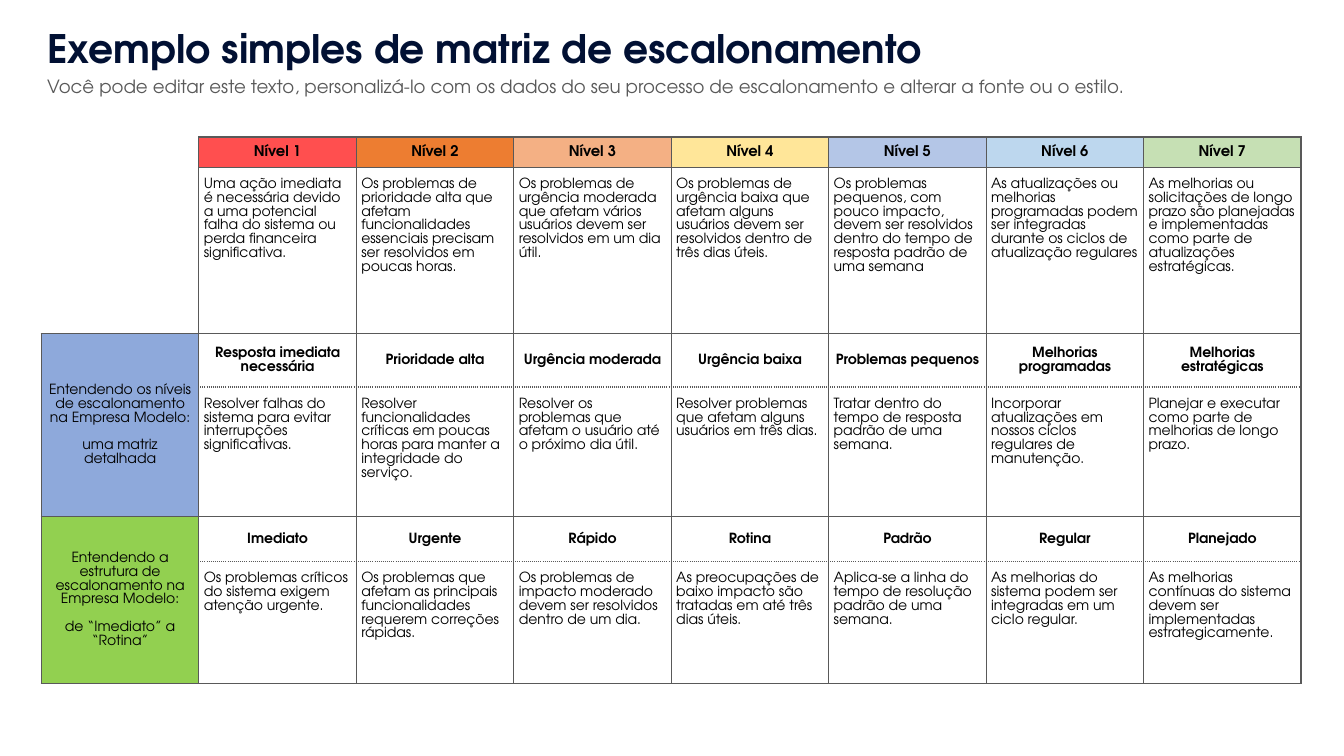
"""Build a one-slide escalation matrix with seven levels."""
from dataclasses import dataclass

from lxml import etree
from pptx import Presentation
from pptx.dml.color import RGBColor
from pptx.enum import text
from pptx.oxml.ns import qn
from pptx.util import Pt

TITLE = "Exemplo simples de matriz de escalonamento"
SUBTITLE = ("Você pode editar este texto, personalizá-lo com os dados do seu processo "
            "de escalonamento e alterar a fonte ou o estilo.")
LEVEL_FILLS = ["FF4F4F", "ED7D31", "F4B084", "FFE699", "B4C6E7", "BDD7EE", "C6E0B4"]
ROWS = [
    ("level", 21.6, [f"Nível {number}" for number in range(1, 8)]),
    ("body", 118.8, [
        "Uma ação imediata é necessária devido a uma potencial falha do sistema ou perda financeira significativa.",
        "Os problemas de prioridade alta que afetam funcionalidades essenciais precisam ser resolvidos em poucas horas.",
        "Os problemas de urgência moderada que afetam vários usuários devem ser resolvidos em um dia útil.",
        "Os problemas de urgência baixa que afetam alguns usuários devem ser resolvidos dentro de três dias úteis.",
        "Os problemas pequenos, com pouco impacto, devem ser resolvidos dentro do tempo de resposta padrão de uma semana",
        "As atualizações ou melhorias programadas podem ser integradas durante os ciclos de atualização regulares",
        "As melhorias ou solicitações de longo prazo são planejadas e implementadas como parte de atualizações estratégicas.",
    ]),
    ("heading", 38.2, [
        "Resposta imediata necessária", "Prioridade alta", "Urgência moderada", "Urgência baixa",
        "Problemas pequenos", "Melhorias programadas", "Melhorias estratégicas",
    ]),
    ("detail", 92.2, [
        "Resolver falhas do sistema para evitar interrupções significativas.",
        "Resolver funcionalidades críticas em poucas horas para manter a integridade do serviço.",
        "Resolver os problemas que afetam o usuário até o próximo dia útil.",
        "Resolver problemas que afetam alguns usuários em três dias.",
        "Tratar dentro do tempo de resposta padrão de uma semana.",
        "Incorporar atualizações em nossos ciclos regulares de manutenção.",
        "Planejar e executar como parte de melhorias de longo prazo.",
    ]),
    ("heading", 32.4, ["Imediato", "Urgente", "Rápido", "Rotina", "Padrão", "Regular", "Planejado"]),
    ("detail", 87.1, [
        "Os problemas críticos do sistema exigem atenção urgente.",
        "Os problemas que afetam as principais funcionalidades requerem correções rápidas.",
        "Os problemas de impacto moderado devem ser resolvidos dentro de um dia.",
        "As preocupações de baixo impacto são tratadas em até três dias úteis.",
        "Aplica-se a linha do tempo de resolução padrão de uma semana.",
        "As melhorias do sistema podem ser integradas em um ciclo regular.",
        "As melhorias contínuas do sistema devem ser implementadas estrategicamente.",
    ]),
]
SIDE_LABELS = {
    2: ("8EA9DB", "Entendendo os níveis de escalonamento na Empresa Modelo:\numa matriz detalhada"),
    4: ("92D050", "Entendendo a estrutura de escalonamento na Empresa Modelo:\nde “Imediato” a “Rotina”"),
}


@dataclass(frozen=True)
class Theme:
    """Colours, font and type sizes of the slide."""
    font: str = "TeX Gyre Adventor"
    navy: str = "011033"
    grey: str = "595959"
    black: str = "000000"
    title_size: float = 28
    subtitle_size: float = 13
    level_size: float = 10.5
    cell_size: float = 10


THEME = Theme()
SIDES = ("lnL", "lnR", "lnT", "lnB")
CENTER = text.PP_ALIGN.CENTER
LEFT = text.PP_ALIGN.LEFT


def format_text(frame, size, color, bold=False, align=LEFT):
    """Apply one type style to every run of a text frame."""
    for para in frame.paragraphs:
        para.alignment = align
        for span in para.runs:
            span.font.name = THEME.font
            span.font.size = Pt(size)
            span.font.bold = bold
            span.font.color.rgb = RGBColor.from_string(color)


def place_heading(box, top, height, wording, size, color, bold):
    """Place and style a heading box above the table."""
    box.left, box.top, box.width, box.height = Pt(26.6), Pt(top), Pt(866), Pt(height)
    frame = box.text_frame
    frame.text = wording
    frame.word_wrap = True
    frame.auto_size = text.MSO_AUTO_SIZE.NONE
    frame.vertical_anchor = text.MSO_ANCHOR.TOP
    format_text(frame, size, color, bold)


def set_borders(cell, drawn=SIDES, dotted=None):
    """Draw the named cell sides and hide the others."""
    properties = cell._tc.get_or_add_tcPr()
    for side in SIDES:
        line = etree.SubElement(properties, qn(f"a:{side}"), w=str(Pt(1)))
        if side not in drawn:
            etree.SubElement(line, qn("a:noFill"))
            continue
        fill = etree.SubElement(line, qn("a:solidFill"))
        etree.SubElement(fill, qn("a:srgbClr"), val=THEME.grey)
        etree.SubElement(line, qn("a:prstDash"), val="sysDot" if side == dotted else "solid")


def fill_cell(cell, color=None):
    """Fill a cell with a colour, or leave it clear."""
    if color:
        cell.fill.solid()
        cell.fill.fore_color.rgb = RGBColor.from_string(color)
    else:
        cell.fill.background()


def write_cell(cell, wording, size, bold=False, centered=True):
    """Write a cell either centred or as top-left body text."""
    cell.margin_left = cell.margin_right = Pt(3.6)
    cell.margin_top, cell.margin_bottom = Pt(0 if centered else 7.2), Pt(0)
    cell.vertical_anchor = text.MSO_ANCHOR.MIDDLE if centered else text.MSO_ANCHOR.TOP
    cell.text_frame.text = wording
    format_text(cell.text_frame, size, THEME.black, bold, CENTER if centered else LEFT)
    for para in cell.text_frame.paragraphs:
        para.line_spacing = 1.07
        if not centered:
            para.space_before = Pt(12)
        if not wording:
            etree.SubElement(para._p, qn("a:endParaRPr"), sz=str(int(size * 100)))


def add_matrix(page):
    """Add the escalation table."""
    heights = [height for _, height, _ in ROWS]
    columns = len(LEVEL_FILLS) + 1
    shape = page.shapes.add_table(len(ROWS), columns, Pt(29.5), Pt(97.9), Pt(900), Pt(sum(heights)))
    table = shape.table
    table.first_row = table.horz_banding = False
    for column in table.columns:
        column.width = Pt(900 / columns)

    dotted_sides = {"heading": "lnB", "detail": "lnT"}
    for row, (kind, height, wordings) in enumerate(ROWS):
        table.rows[row].height = Pt(height)
        for column, wording in enumerate(wordings, start=1):
            cell = table.cell(row, column)
            size = THEME.level_size if kind == "level" else THEME.cell_size
            strong = kind in ("level", "heading")
            write_cell(cell, wording, size, bold=strong, centered=strong)
            set_borders(cell, dotted=dotted_sides.get(kind))
            fill_cell(cell, LEVEL_FILLS[column - 1] if kind == "level" else None)

    for row, drawn in enumerate([("lnR",), ("lnR", "lnB")]):
        corner = table.cell(row, 0)
        write_cell(corner, "", THEME.cell_size)
        set_borders(corner, drawn)
        fill_cell(corner)

    for row, (color, wording) in SIDE_LABELS.items():
        label, below = table.cell(row, 0), table.cell(row + 1, 0)
        label.merge(below)
        write_cell(label, wording, THEME.cell_size)
        label.text_frame.paragraphs[1].space_before = Pt(10)
        for cell in (label, below):
            set_borders(cell)
            fill_cell(cell, color)


def main():
    """Build and save the deck."""
    deck = Presentation()
    deck.slide_width, deck.slide_height = Pt(960), Pt(540)
    page = deck.slides.add_slide(deck.slide_layouts[5])
    add_matrix(page)
    place_heading(page.shapes.title, 13.7, 41, TITLE, THEME.title_size, THEME.navy, True)
    subtitle = page.shapes.add_textbox(0, 0, 0, 0)
    place_heading(subtitle, 50.4, 23, SUBTITLE, THEME.subtitle_size, THEME.grey, False)
    deck.save("out.pptx")


if __name__ == "__main__":
    main()
